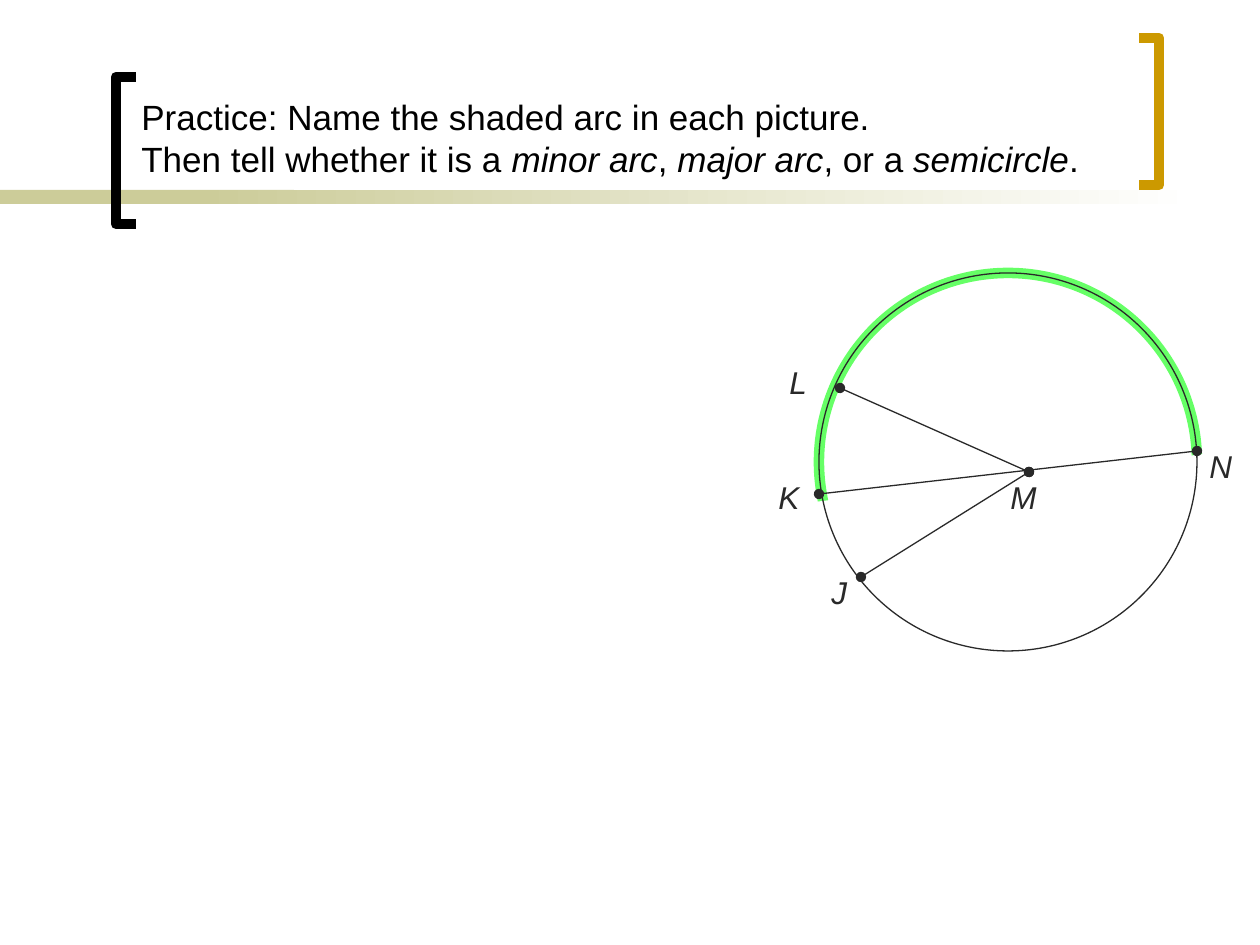
import pptx
import pptx.util
import pptx.dml.color
import pptx.enum.shapes
import pptx.enum.text
import pptx.oxml.ns
import lxml.etree

SCALE = 914400 / 126
SHAPES = pptx.enum.shapes.MSO_SHAPE
INK = "292929"


def emu(*lengths):
    return [round(length * SCALE) for length in lengths]


def color(value):
    return pptx.dml.color.RGBColor.from_string(value)


deck = pptx.Presentation()
deck.slide_width, deck.slide_height = emu(1260, 945)
page = deck.slides.add_slide(deck.slide_layouts[6])

rule = page.shapes.add_shape(SHAPES.RECTANGLE, *emu(0, 190, 294, 14))
rule.fill.solid()
rule.fill.fore_color.rgb = color("CCCC99")
fade = page.shapes.add_shape(SHAPES.RECTANGLE, *emu(199, 190, 998, 14))
fade.fill.gradient()
fade.fill.gradient_angle = 0
for stop, value in zip(fade.fill.gradient_stops, ["CCCC99", "FFFFFF"]):
    stop.color.rgb = color(value)
for band in (rule, fade):
    band.line.fill.background()
    band.shadow.inherit = False

for open_x, spine_x, top, value in [(136, 116, 77, "000000"), (1139, 1159, 38, "CC9900")]:
    builder = page.shapes.build_freeform(open_x, top, SCALE)
    bottom = top + 147
    builder.add_line_segments([(spine_x, top), (spine_x, bottom), (open_x, bottom)], close=False)
    bracket = builder.convert_to_shape()
    bracket.fill.background()
    bracket.line.color.rgb = color(value)
    bracket.line.width = pptx.util.Pt(6)
    bracket.shadow.inherit = False

shaded_arc = page.shapes.add_shape(SHAPES.OVAL, *emu(819, 273, 378, 378))
builder = page.shapes.build_freeform(798, 504, SCALE)
builder.add_line_segments([(1228, 451), (1176, 662), (976, 683), (809, 577)])
arc_cover = builder.convert_to_shape()
arc_cover.fill.solid()
arc_cover.fill.fore_color.rgb = color("FFFFFF")
arc_cover.line.fill.background()
arc_cover.shadow.inherit = False
circle = page.shapes.add_shape(SHAPES.OVAL, *emu(819, 273, 378, 378))
for ring, value, width in [(shaded_arc, "66FF66", 6), (circle, INK, 0.75)]:
    ring.fill.background()
    ring.line.color.rgb = color(value)
    ring.line.width = pptx.util.Pt(width)
    ring.shadow.inherit = False

title = page.shapes.add_textbox(*emu(129, 73, 987, 113))
title.text_frame.word_wrap = True
title.text_frame.vertical_anchor = pptx.enum.text.MSO_ANCHOR.BOTTOM
para = title.text_frame.paragraphs[0]
para.text = "Practice: Name the shaded arc in each picture.\v"
for text in ["Then tell whether it is a ", "minor arc", ", ", "major arc", ", or a ", "semicircle", "."]:
    span = para.add_run()
    span.text = text
    span.font.italic = text in ("minor arc", "major arc", "semicircle")
for span in para.runs:
    span.font.name = "Arial"
    span.font.size = pptx.util.Pt(20)
    span.font.color.rgb = color("000000")

points = {"J": (861, 577), "K": (819, 494), "L": (840, 388), "M": (1029, 472), "N": (1197, 451)}
for start, end in ["JM", "LM", "KN"]:
    segment = page.shapes.add_connector(
        pptx.enum.shapes.MSO_CONNECTOR.STRAIGHT, *emu(*points[start], *points[end]))
    segment.line.color.rgb = color(INK)
    segment.line.width = pptx.util.Pt(0.75)
    properties = segment._element.spPr
    outline = properties.find(pptx.oxml.ns.qn("a:ln"))
    for tag in ("a:headEnd", "a:tailEnd"):
        lxml.etree.SubElement(outline, pptx.oxml.ns.qn(tag), type="oval")
    lxml.etree.SubElement(properties, pptx.oxml.ns.qn("a:effectLst"))

labels = [("J", 819, 567, 84), ("K", 766, 472, 84), ("L", 777, 357, 84),
          ("M", 998, 472, 84), ("N", 1197, 441, 42)]
for name, left, top, width in labels:
    box = page.shapes.add_textbox(*emu(left, top, width, 50))
    box.text_frame.word_wrap = True
    box.text_frame.text = name
    span = box.text_frame.paragraphs[0].runs[0]
    span.font.name = "Arial"
    span.font.size = pptx.util.Pt(18)
    span.font.italic = True
    span.font.color.rgb = color(INK)

deck.save("out.pptx")
